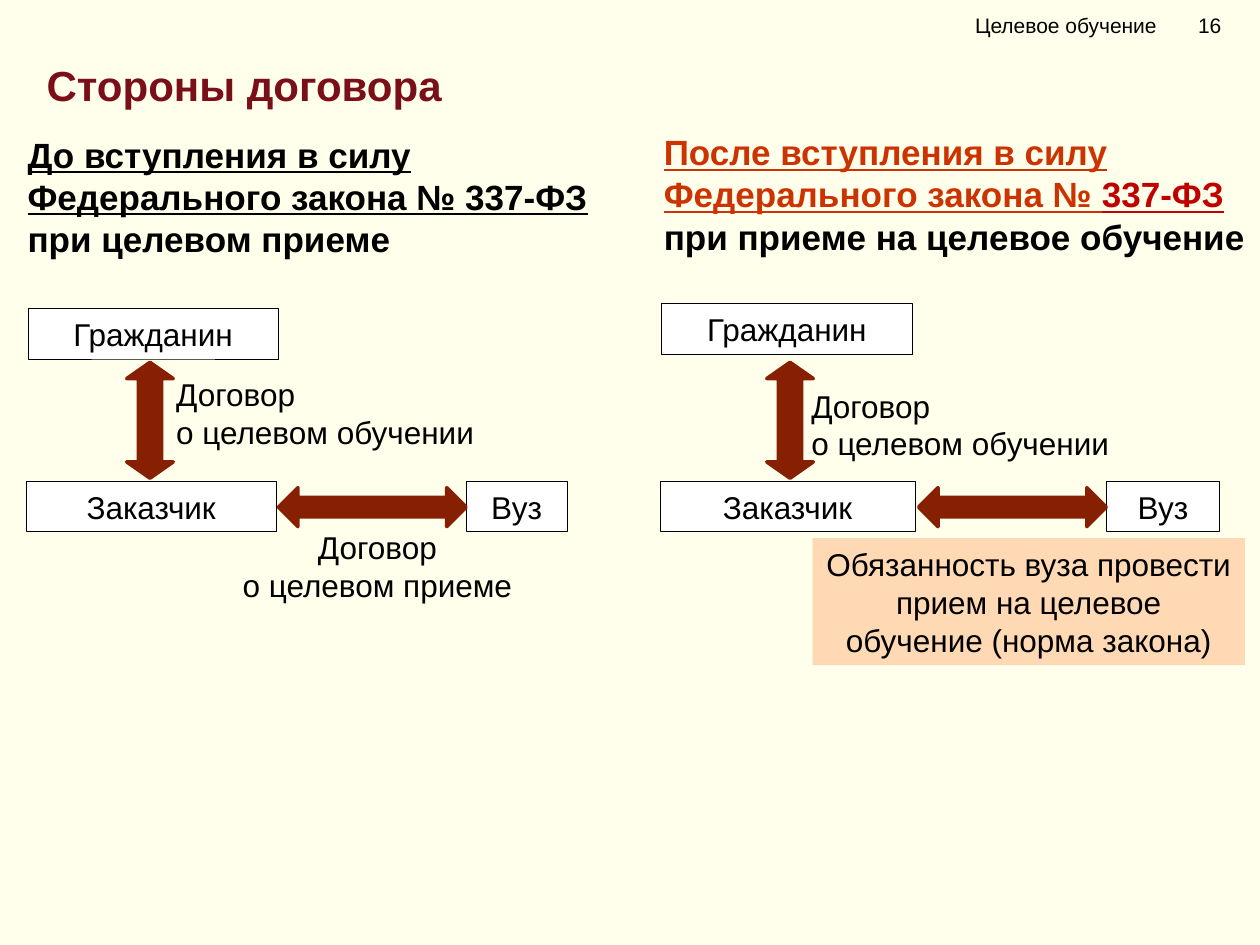
from lxml import etree
from pptx import Presentation
from pptx.dml.color import RGBColor
from pptx.enum.shapes import MSO_SHAPE as SHAPE
from pptx.enum.text import MSO_ANCHOR as ANCHOR, MSO_AUTO_SIZE as FIT, PP_ALIGN as ALIGN
from pptx.oxml.ns import qn
from pptx.util import Inches, Pt

CREAM = RGBColor(0xFF, 0xFF, 0xEB)
WHITE = RGBColor(0xFF, 0xFF, 0xFF)
BLACK = RGBColor(0, 0, 0)
BROWN = RGBColor(0x87, 0x1F, 0x03)
PEACH = RGBColor(0xFF, 0xD9, 0xB3)
MAROON = RGBColor(0x7B, 0x0F, 0x19)
ORANGE = RGBColor(0xCC, 0x33, 0x00)
RED = RGBColor(0xC0, 0x00, 0x00)


class SlideBuilder:
    """Holds the text style and the current slide."""

    font = {"name": "Arial", "size": Pt(18)}

    def __init__(self, deck):
        self.page = deck.slides.add_slide(deck.slide_layouts[5])
        fill = self.page.background.fill
        fill.solid()
        fill.fore_color.rgb = CREAM

    def set_text(self, box, paragraphs, align=ALIGN.LEFT, anchor=ANCHOR.TOP):
        """Each paragraph is a list of (text, colour, font settings)."""
        frame = box.text_frame
        settings = {"word_wrap": True, "auto_size": FIT.NONE, "vertical_anchor": anchor}
        for name, value in settings.items():
            setattr(frame, name, value)
        for index, spans in enumerate(paragraphs):
            para = frame.add_paragraph() if index else frame.paragraphs[0]
            para.alignment = align
            for text, color, extra in spans:
                span = para.add_run()
                span.text = text
                span.font.color.rgb = color
                for name, value in {**self.font, **extra}.items():
                    setattr(span.font, name, value)

    def title(self, text, left, top, width, height):
        box = self.page.shapes.title
        place = {"left": left, "top": top, "width": width, "height": height}
        for name, value in place.items():
            setattr(box, name, Inches(value))
        style = {"size": Pt(24), "bold": True}
        self.set_text(box, [[(text, MAROON, style)]], anchor=ANCHOR.MIDDLE)

    def text(self, paragraphs, left, top, width, height, **layout):
        box = self.page.shapes.add_textbox(*map(Inches, (left, top, width, height)))
        self.set_text(box, paragraphs, **layout)
        return box

    def label(self, lines, *place, **layout):
        self.text([[(line, BLACK, {})] for line in lines], *place, **layout)

    def shape(self, kind, place, fill, line=None, weight=0):
        shape = self.page.shapes.add_shape(kind, *map(Inches, place))
        shape.shadow.inherit = False
        shape.fill.solid()
        shape.fill.fore_color.rgb = fill
        if line is None:
            shape.line.fill.background()
        else:
            shape.line.color.rgb = line
            shape.line.width = Pt(weight)
        return shape

    def block(self, text, *place, fill=WHITE, line=BLACK):
        box = self.shape(SHAPE.RECTANGLE, place, fill, line, 0.25)
        self.set_text(box, [[(text, BLACK, {})]], ALIGN.CENTER, ANCHOR.MIDDLE)

    def arrow(self, *place, rotation=0, head=0.5):
        arrow = self.shape(SHAPE.LEFT_RIGHT_ARROW, place, BROWN, BROWN, 2)
        arrow.rotation = rotation
        arrow.adjustments[1] = head

    def header(self, text, number, tab, *place):
        """Running title, with the page number at a tab stop."""
        spans = [(f"{text}\t{number}", BLACK, {"size": Pt(12)})]
        box = self.text([spans], *place, anchor=ANCHOR.MIDDLE)
        props = box.text_frame.paragraphs[0]._p.get_or_add_pPr()
        stops = etree.SubElement(props, qn("a:tabLst"))
        etree.SubElement(stops, qn("a:tab"), pos=str(Inches(tab)), algn="l")

    def parties(self, citizen, customer, university, vertical, horizontal, label):
        """Citizen, customer and university, joined by two arrows."""
        self.label(["Договор", "о целевом обучении"], *label)
        self.block("Вуз", university[0], 3.82, university[1], 0.4)
        self.block("Заказчик", customer[0], 3.82, customer[1], 0.4)
        self.block("Гражданин", *citizen, 1.99, 0.4)
        self.arrow(vertical, 3.15, 0.92, 0.37, rotation=90, head=0.35)
        self.arrow(horizontal, 3.87, 1.49, 0.31)


def main():
    deck = Presentation()
    deck.slide_width, deck.slide_height = Inches(10), Inches(7.5)
    slide = SlideBuilder(deck)

    # Header and title
    slide.header("Целевое обучение", 16, 1.77, 7.64, 0, 2.36, 0.4)
    slide.title("Стороны договора", 0.27, 0.44, 9.29, 0.47)

    # Column headings
    big = {"size": Pt(20), "bold": True}
    law = {**big, "underline": True}
    slide.text([[("До вступления в силу Федерального закона № 337-ФЗ ", BLACK, law),
                 ("при целевом приеме", BLACK, big)]], 0.12, 1.01, 4.71, 1.11)
    slide.text([[("После вступления в силу Федерального закона № ", ORANGE, law),
                 ("337-ФЗ", RED, law)],
                [("при приеме на целевое обучение", BLACK, big)]], 5.17, 0.99, 4.83, 1.11)

    # Before the law
    slide.parties(citizen=(0.22, 2.45), customer=(0.21, 1.98), university=(3.7, 0.8),
                  vertical=0.73, horizontal=2.21, label=(1.3, 2.93, 2.72, 0.7))
    slide.label(["Договор", "о целевом приеме"], 0.87, 4.14, 4.25, 0.71, align=ALIGN.CENTER)

    # After the law
    slide.parties(citizen=(5.25, 2.41), customer=(5.24, 2.02), university=(8.78, 0.9),
                  vertical=5.81, horizontal=7.29, label=(6.34, 3.02, 2.69, 0.7))
    slide.block("Обязанность вуза провести прием на целевое обучение (норма закона)",
                6.45, 4.27, 3.43, 1.01, fill=PEACH, line=None)

    deck.save("out.pptx")


if __name__ == "__main__":
    main()
